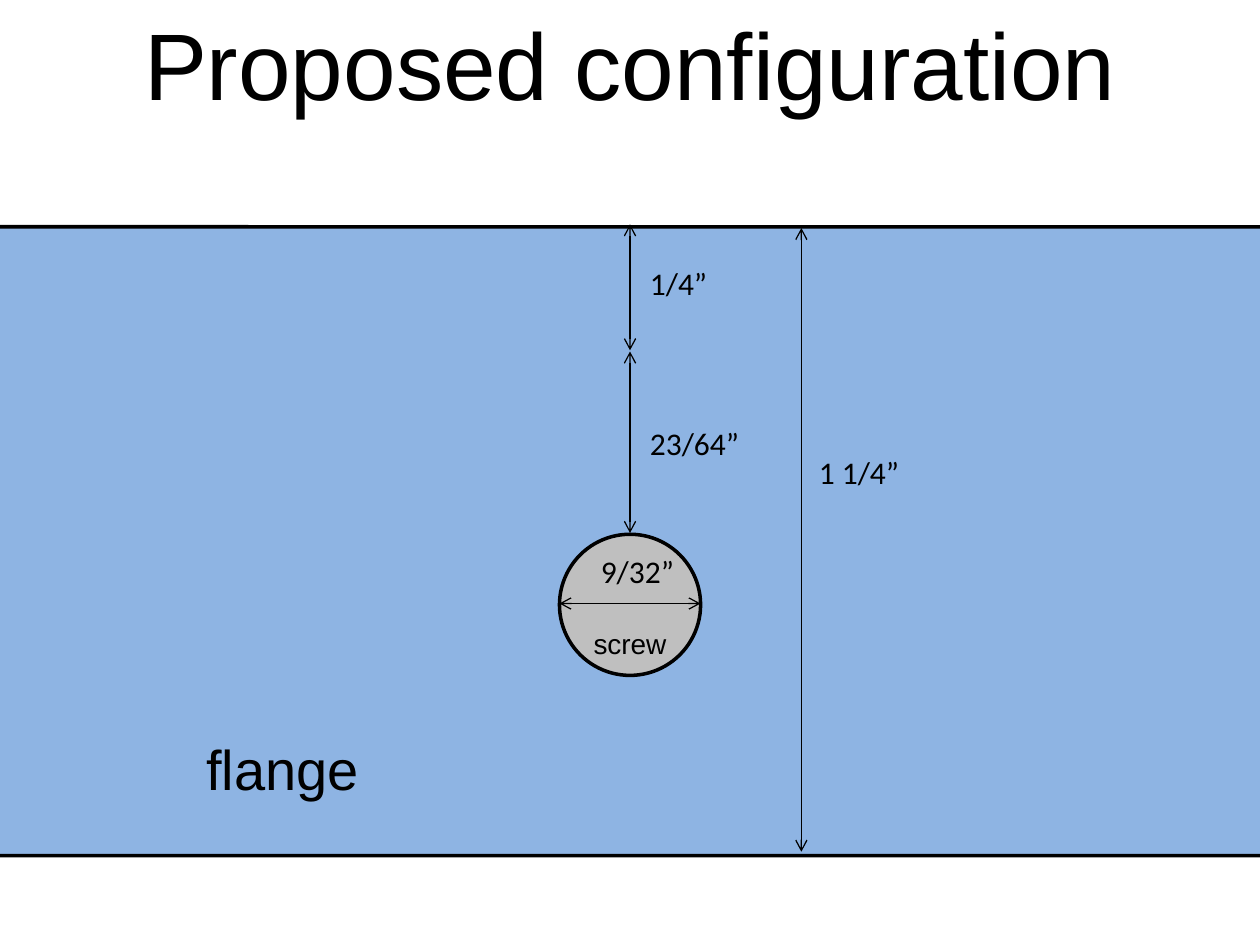
from lxml import etree
from pptx import Presentation
from pptx.dml.color import RGBColor
from pptx.enum.shapes import MSO_CONNECTOR as CONNECTOR, MSO_SHAPE as SHAPE
from pptx.enum.text import MSO_ANCHOR as ANCHOR, PP_ALIGN as ALIGN
from pptx.oxml.ns import qn
from pptx.util import Inches, Pt

BLACK = RGBColor(0x00, 0x00, 0x00)
WHITE = RGBColor(0xFF, 0xFF, 0xFF)
FLANGE_BLUE = RGBColor(0x8E, 0xB4, 0xE3)
SCREW_GREY = RGBColor(0xBF, 0xBF, 0xBF)


def write(frame, text, size, font, align=ALIGN.LEFT):
    paragraph = frame.paragraphs[0]
    paragraph.alignment = align
    run = paragraph.add_run()
    run.text = text
    run.font.size = Pt(size)
    run.font.name = font
    run.font.color.rgb = BLACK


def add_label(slide, box, text, size=18, font="Calibri", align=ALIGN.LEFT, wrap=True):
    label = slide.shapes.add_textbox(*map(Inches, box))
    label.text_frame.word_wrap = wrap
    write(label.text_frame, text, size, font, align)


def add_part(slide, kind, box, color):
    part = slide.shapes.add_shape(kind, *map(Inches, box))
    part.shadow.inherit = False
    part.fill.solid()
    part.fill.fore_color.rgb = color
    part.line.color.rgb = BLACK
    part.line.width = Pt(2)
    return part


def add_dimension(slide, start, end):
    dimension = slide.shapes.add_connector(
        CONNECTOR.STRAIGHT, *map(Inches, (*start, *end)))
    dimension.line.color.rgb = BLACK
    dimension.line.width = Pt(0.75)
    outline = dimension.line._get_or_add_ln()
    for arrowhead in ("a:headEnd", "a:tailEnd"):
        etree.SubElement(outline, qn(arrowhead), type="arrow")
    etree.SubElement(dimension._element.spPr, qn("a:effectLst"))


def add_flange(slide, box):
    left, top, width, height = box
    flange = add_part(slide, SHAPE.ROUNDED_RECTANGLE, box, FLANGE_BLUE)
    flange.adjustments[0] = 0.02
    add_label(slide, (left + 1.78, top + 3.98, 1.42, 0.64), "flange", 32, "Arial", wrap=False)
    depth_x = left + 6.6
    add_dimension(slide, (depth_x, top + 0.01), (depth_x, top + height - 0.03))
    add_label(slide, (depth_x + 0.04, top + 1.75, 1.15, 0.4), "1 1/4”")


def add_screw(slide, box):
    left, top, width, height = box
    screw = add_part(slide, SHAPE.OVAL, box, SCREW_GREY)
    frame = screw.text_frame
    frame.word_wrap = True
    frame.vertical_anchor = ANCHOR.BOTTOM
    frame.margin_left = frame.margin_right = 0
    frame.margin_bottom = Inches(-0.04)
    write(frame, "screw", 16, "Arial", ALIGN.CENTER)
    middle = top + height / 2 - 0.01
    add_dimension(slide, (left, middle), (left + width, middle))
    add_label(slide, (left + 0.23, top + 0.09, 1.24, 0.4), "9/32”")


def add_offsets(slide, box):
    left, top, width, height = box
    split = top + 1
    add_dimension(slide, (left, split), (left, top))
    add_dimension(slide, (left, split + 0.01), (left, top + height))
    add_label(slide, (left + 0.06, top + 0.27, 0.79, 0.4), "1/4”")
    add_label(slide, (left + 0.06, top + 1.54, width, 0.4), "23/64”")


def main():
    deck = Presentation()
    deck.slide_width, deck.slide_height = Inches(10), Inches(7.5)
    slide = deck.slides.add_slide(deck.slide_layouts[6])
    slide.background.fill.solid()
    slide.background.fill.fore_color.rgb = WHITE
    add_label(slide, (0, 0, 10, 1.01), "Proposed configuration", 54, "Arial", ALIGN.CENTER)
    add_flange(slide, (-0.24, 1.8, 10.56, 4.99))
    add_screw(slide, (4.44, 4.24, 1.12, 1.12))
    add_offsets(slide, (5, 1.78, 1.15, 2.45))
    deck.save("out.pptx")


if __name__ == "__main__":
    main()
